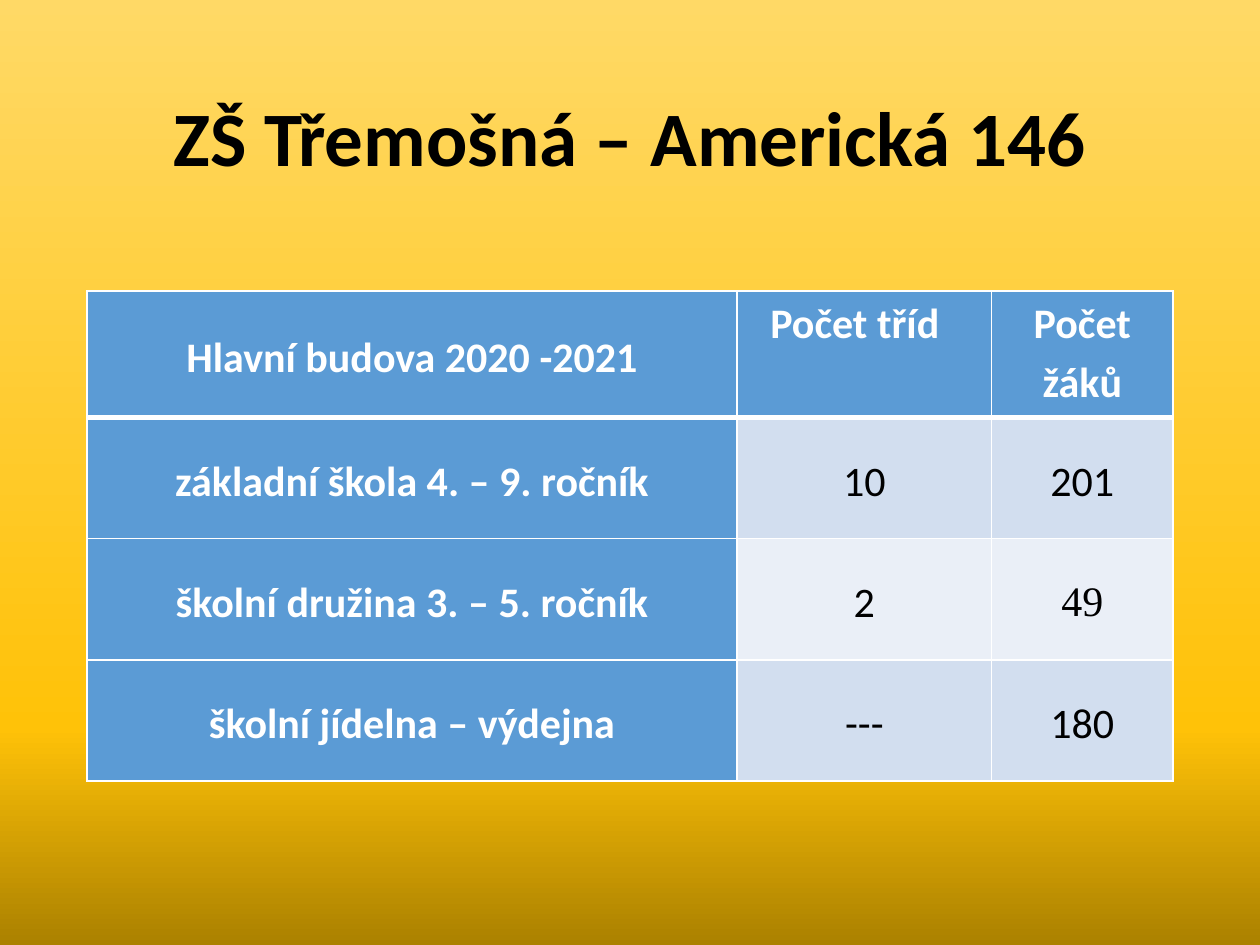
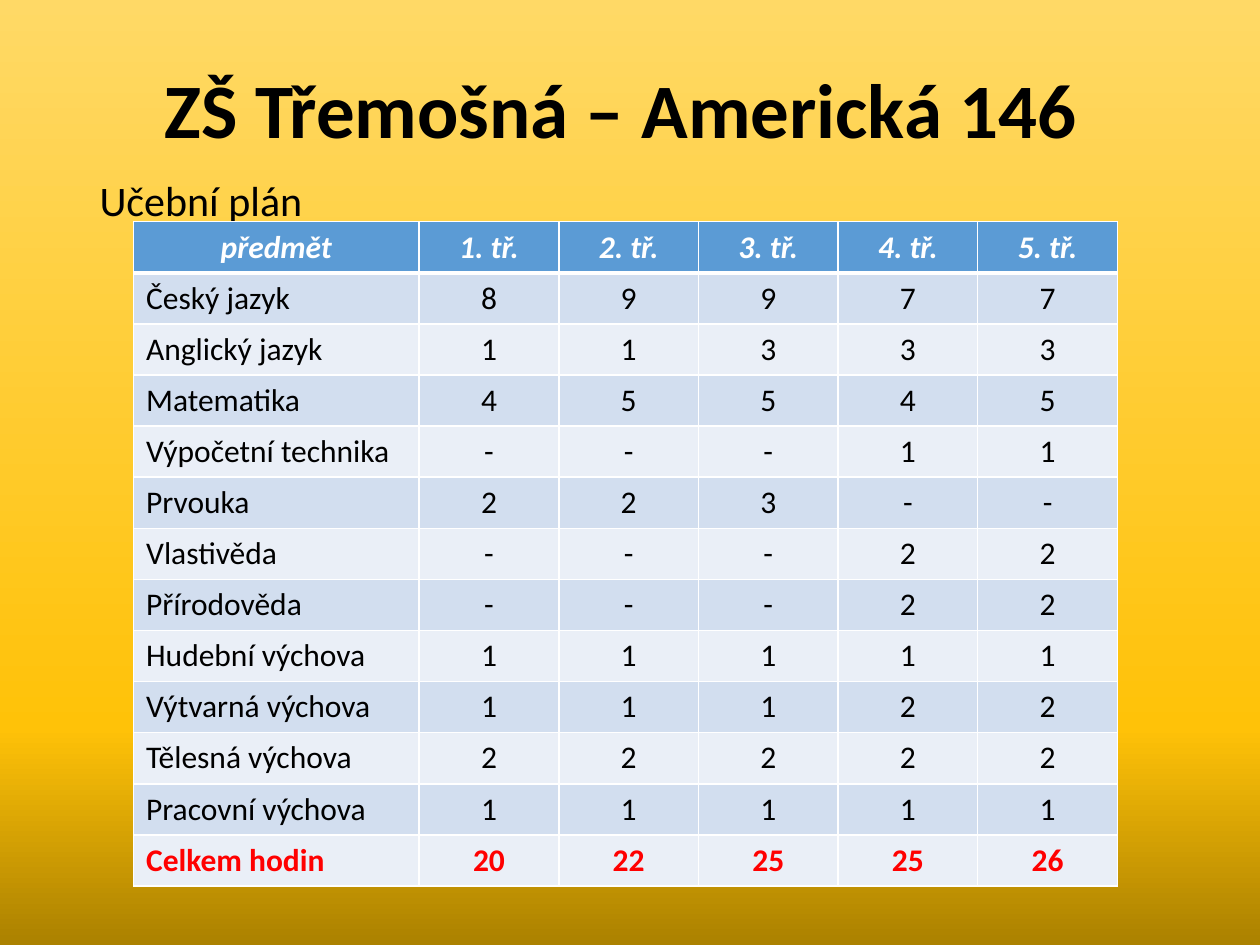
from dataclasses import dataclass

from lxml import etree
from pptx import Presentation
from pptx import util as u
from pptx.dml.color import RGBColor
from pptx.enum import text
from pptx.oxml import ns


@dataclass(frozen=True)
class Theme:
    font: str = "Calibri"
    ink: str = "000000"
    white: str = "FFFFFF"
    total: str = "FF0000"
    header: str = "5B9BD5"
    bands: tuple = ("D2DEEF", "EAEFF7")
    backdrop: tuple = ((0, "AB8100"), (23, "FFC208"), (100, "FFD966"))
    title_size: int = 44
    large_size: int = 24
    small_size: int = 18
    thin: int = 1
    thick: int = 3


THEME = Theme()
COLUMNS, ROWS = 100, 75
SLIDE_WIDTH, SLIDE_HEIGHT = u.Inches(10), u.Inches(7.5)
CENTER, LEFT = text.PP_ALIGN.CENTER, text.PP_ALIGN.LEFT
MIDDLE, TOP = text.MSO_ANCHOR.MIDDLE, text.MSO_ANCHOR.TOP

SCHOOL = "ZŠ Třemošná – Americká 146"
BUILDING = [
    ["Hlavní budova 2020 -2021", "Počet tříd", "Počet žáků"],
    ["základní škola 4. – 9. ročník", "10", "201"],
    ["školní družina 3. – 5. ročník", "2", "49"],
    ["školní jídelna – výdejna", "---", "180"],
]
LESSONS = {
    "Český jazyk": "89977",
    "Anglický jazyk": "11333",
    "Matematika": "45545",
    "Výpočetní technika": "---11",
    "Prvouka": "223--",
    "Vlastivěda": "---22",
    "Přírodověda": "---22",
    "Hudební výchova": "11111",
    "Výtvarná výchova": "11122",
    "Tělesná výchova": "22222",
    "Pracovní výchova": "11111",
}
TIMETABLE = [
    ["předmět"] + [f"{grade}. tř." for grade in range(1, 6)],
    *([subject, *hours] for subject, hours in LESSONS.items()),
    ["Celkem hodin", "20", "22", "25", "25", "26"],
]


def grid_box(left, top, width, height):
    """Turn grid columns and rows into slide lengths."""
    return {
        "left": round(SLIDE_WIDTH * left / COLUMNS),
        "top": round(SLIDE_HEIGHT * top / ROWS),
        "width": round(SLIDE_WIDTH * width / COLUMNS),
        "height": round(SLIDE_HEIGHT * height / ROWS),
    }


def set_format(target, values):
    for name, value in values.items():
        setattr(target, name, value)


def write(paragraph, words, size, color=THEME.ink, alignment=LEFT, spacing=1.0, **font_values):
    paragraph.text = words
    set_format(paragraph, {"alignment": alignment, "line_spacing": spacing,
                           "space_before": u.Pt(0)})
    font = paragraph.runs[0].font
    set_format(font, {"name": THEME.font, "size": u.Pt(size), "bold": False,
                      "italic": False, **font_values})
    font.color.rgb = RGBColor.from_string(color)


# Shared background
def paint_background(master):
    fill = master.background.fill
    fill.gradient()
    gradient = master.element.find(".//" + ns.qn("a:gradFill"))
    stops = gradient.find(ns.qn("a:gsLst"))
    for stop in list(stops):
        stops.remove(stop)
    for share, color in THEME.backdrop:
        stop = etree.SubElement(stops, ns.qn("a:gs"), pos=str(share * 1000))
        etree.SubElement(stop, ns.qn("a:srgbClr"), val=color)
    gradient.find(ns.qn("a:lin")).set("ang", str(270 * 60000))


# Title and body placeholders
def place_title(slide, box, words):
    title = slide.shapes.title
    set_format(title, box)
    set_format(title.text_frame, {"vertical_anchor": MIDDLE, "word_wrap": True,
                                  "auto_size": text.MSO_AUTO_SIZE.NONE})
    write(title.text_frame.paragraphs[0], words, THEME.title_size,
          alignment=CENTER, spacing=0.9, bold=True)


def place_subtitle(slide, box, words):
    body = slide.placeholders[1]
    set_format(body, box)
    set_format(body.text_frame, {"vertical_anchor": TOP, "word_wrap": True,
                                 "auto_size": text.MSO_AUTO_SIZE.NONE,
                                 "margin_top": u.Inches(0.47)})
    paragraph = body.text_frame.paragraphs[0]
    properties = paragraph._p.get_or_add_pPr()
    properties.set("marL", "0")
    properties.set("indent", "0")
    etree.SubElement(properties, ns.qn("a:buNone"))
    write(paragraph, words, THEME.large_size, spacing=0.9)


# Tables
def add_borders(cell, row):
    edges = {"lnL": THEME.thin, "lnR": THEME.thin,
             "lnT": THEME.thick if row == 1 else THEME.thin,
             "lnB": THEME.thick if row == 0 else THEME.thin}
    properties = cell._tc.get_or_add_tcPr()
    for index, (edge, width) in enumerate(edges.items()):
        line = etree.Element(ns.qn(f"a:{edge}"), w=str(u.Pt(width)))
        fill = etree.SubElement(line, ns.qn("a:solidFill"))
        etree.SubElement(fill, ns.qn("a:srgbClr"), val=THEME.white)
        properties.insert(index, line)


def place_table(slide, box, rows, column_weights, row_weights, style_cell):
    """Share the box among weighted columns and rows; style_cell formats each cell."""
    table = slide.shapes.add_table(len(rows), len(rows[0]), **box).table
    table.horz_banding = False
    for column, weight in zip(table.columns, column_weights):
        column.width = round(box["width"] * weight / sum(column_weights))
    for row, weight in zip(table.rows, row_weights):
        row.height = round(box["height"] * weight / sum(row_weights))
    for row, values in enumerate(rows):
        for column, words in enumerate(values):
            cell = table.cell(row, column)
            color, cell_values, text_values = style_cell(row, column)
            cell.fill.solid()
            cell.fill.fore_color.rgb = RGBColor.from_string(color)
            add_borders(cell, row)
            set_format(cell, cell_values)
            write(cell.text_frame.paragraphs[0], words, **text_values)


def band_color(row):
    return THEME.bands[(row - 1) % 2]


def style_building(row, column):
    heading = row == 0 or column == 0
    side = u.Inches(0.07)
    cell_values = {"margin_left": side, "margin_right": side, "margin_top": 0,
                   "margin_bottom": 0,
                   "vertical_anchor": TOP if row == 0 and column else MIDDLE}
    text_values = {"size": THEME.large_size, "alignment": CENTER, "spacing": 1.15,
                   "bold": heading, "color": THEME.white if heading else THEME.ink}
    if (row, column) == (0, 1):
        cell_values["margin_right"] = u.Inches(0.22)
    if (row, column) == (2, 2):
        text_values["name"] = "Times New Roman"
    return THEME.header if heading else band_color(row), cell_values, text_values


def style_timetable(row, column):
    heading, total = row == 0, row == len(TIMETABLE) - 1
    color = THEME.white if heading else THEME.total if total else THEME.ink
    text_values = {"size": THEME.small_size, "color": color,
                   "alignment": CENTER if heading or column else LEFT,
                   "bold": heading or total, "italic": heading}
    return THEME.header if heading else band_color(row), {"vertical_anchor": TOP}, text_values


# Slides
def add_building_slide(presentation):
    slide = presentation.slides.add_slide(presentation.slide_layouts[5])
    place_title(slide, grid_box(6.9, 4, 86.2, 14.5), SCHOOL)
    place_table(slide, grid_box(6.9, 23.1, 86.2, 38.9), BUILDING,
                (5.16, 2.02, 1.44), (1, 0.96, 0.96, 0.96), style_building)


def add_timetable_slide(presentation):
    slide = presentation.slides.add_slide(presentation.slide_layouts[1])
    place_title(slide, grid_box(6.9, 3.7, 86.2, 10.7), SCHOOL + " ")
    place_subtitle(slide, grid_box(6.9, 9.6, 86.2, 58), "Učební plán")
    place_table(slide, grid_box(10.6, 17.6, 78.1, 52), TIMETABLE,
                [2.27] + [1.11] * 5, [1] * len(TIMETABLE), style_timetable)


def main():
    presentation = Presentation()
    set_format(presentation, {"slide_width": SLIDE_WIDTH, "slide_height": SLIDE_HEIGHT})
    paint_background(presentation.slide_master)
    add_building_slide(presentation)
    add_timetable_slide(presentation)
    presentation.save("out.pptx")


if __name__ == "__main__":
    main()
